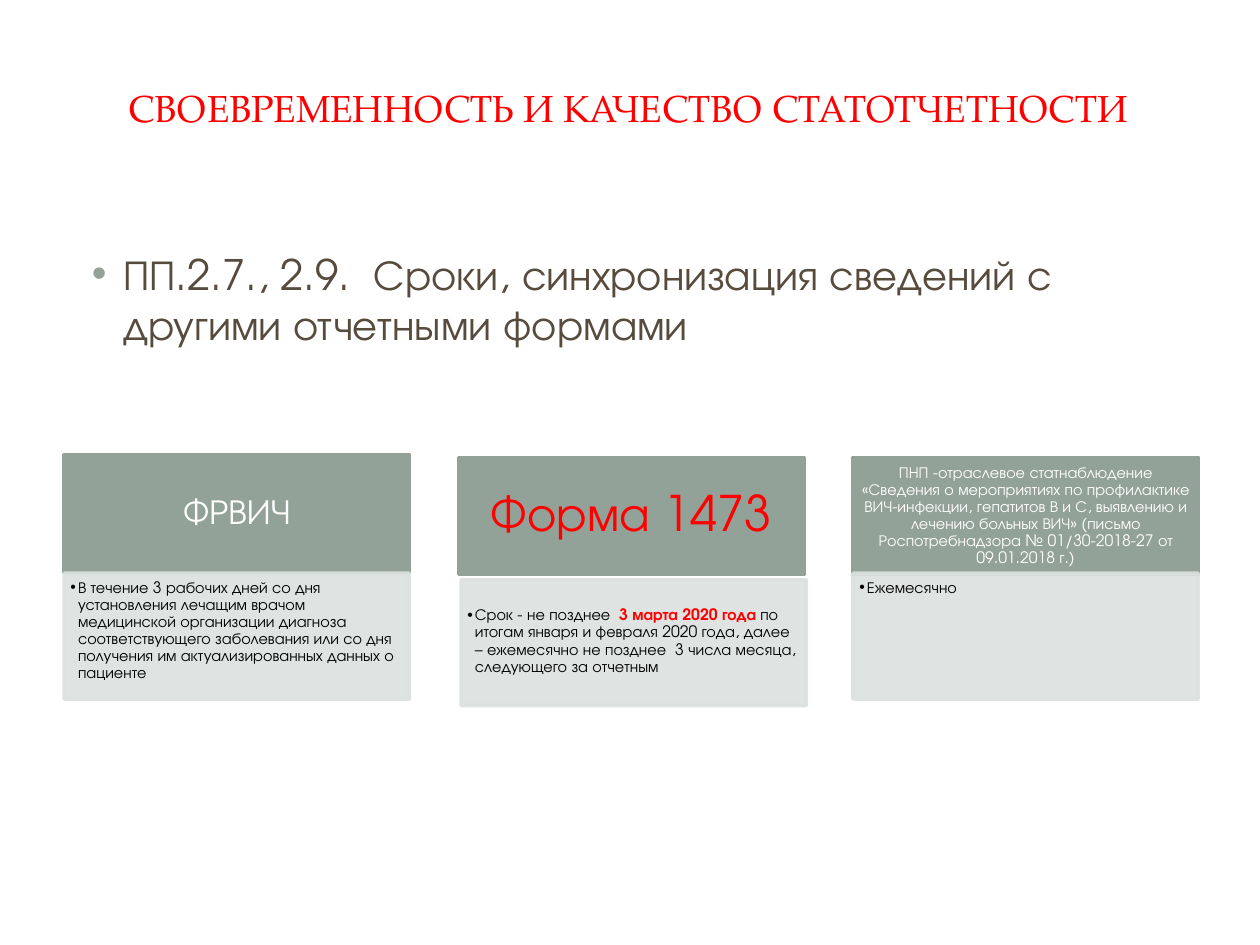
from lxml import etree
from pptx import Presentation, util as u
from pptx.dml.color import RGBColor
from pptx.enum import shapes, text
from pptx.oxml.ns import qn

COLORS = {
    "red": "FF0000",
    "brown": "564B3C",
    "sage": "93A299",
    "mist": "DCE0DE",
    "white": "FFFFFF",
    "black": "000000",
}
SANS, SERIF = "TeX Gyre Adventor", "TeX Gyre Pagella"
COLUMNS, ROWS = 100, 75


def rgb(name):
    return RGBColor.from_string(COLORS[name])


def add_run(p, content, font=SANS, size=9, color="black", bold=False):
    r = p.add_run()
    r.text = content
    r.font.name, r.font.size, r.font.bold = font, u.Pt(size), bold
    r.font.color.rgb = rgb(color)


def set_bullet(p, indent, color):
    pPr = p._p.get_or_add_pPr()
    pPr.set("marL", str(u.Inches(indent[0])))
    pPr.set("indent", str(u.Inches(indent[1])))
    buClr = etree.SubElement(pPr, qn("a:buClr"))
    etree.SubElement(buClr, qn("a:srgbClr"), val=COLORS[color])
    etree.SubElement(pPr, qn("a:buFont"), typeface="Arial")
    etree.SubElement(pPr, qn("a:buChar"), char="•")


def set_alpha(fill_parent, percent):
    for clr in fill_parent.iter(qn("a:srgbClr")):
        etree.SubElement(clr, qn("a:alpha"), val=str(percent * 1000))


class Deck:
    def __init__(self):
        self.prs = Presentation()
        self.prs.slide_width, self.prs.slide_height = u.Inches(10), u.Inches(7.5)
        self.s = self.prs.slides.add_slide(self.prs.slide_layouts[1])

    def cells(self, left, top, width, height):
        dx, dy = self.prs.slide_width / COLUMNS, self.prs.slide_height / ROWS
        return [round(v) for v in (left * dx, top * dy, width * dx, height * dy)]

    def frame(self, sp, anchor, insets):
        tf = sp.text_frame
        tf.word_wrap, tf.auto_size = True, text.MSO_AUTO_SIZE.NONE
        tf.vertical_anchor = anchor
        tf.margin_left, tf.margin_top, tf.margin_right, tf.margin_bottom = map(u.Inches, insets)
        return tf.paragraphs[0]

    def placeholder(self, sp, at, anchor, insets):
        sp.left, sp.top, sp.width, sp.height = self.cells(*at)
        return self.frame(sp, anchor, insets)

    def title(self, content, at):
        p = self.placeholder(self.s.shapes.title, at, text.MSO_ANCHOR.MIDDLE, (0.1, 0.05, 0.1, 0.39))
        p.alignment = text.PP_ALIGN.CENTER
        add_run(p, content, font=SERIF, size=21.6, color="red")

    def body(self, content, at):
        p = self.placeholder(self.s.placeholders[1], at, text.MSO_ANCHOR.TOP, (0.1, 0.05, 0.1, 0.05))
        p.space_before = u.Pt(4.8)
        set_bullet(p, (0.38, -0.25), "sage")
        add_run(p, content, size=24, color="brown")

    def box(self, at, color, anchor, insets):
        sp = self.s.shapes.add_shape(shapes.MSO_SHAPE.RECTANGLE, *self.cells(*at))
        sp.shadow.inherit = False
        sp.fill.solid()
        sp.fill.fore_color.rgb = sp.line.color.rgb = rgb(color)
        sp.line.width = u.Pt(2)
        p = self.frame(sp, anchor, insets)
        p.line_spacing = 0.9
        return sp, p

    def header(self, content, at, inset, **style):
        _, p = self.box(at, "sage", text.MSO_ANCHOR.MIDDLE, inset * 2)
        p.alignment = text.PP_ALIGN.CENTER
        add_run(p, content, **style)

    def detail(self, runs, at, top_inset):
        sp, p = self.box(at, "mist", text.MSO_ANCHOR.TOP, (0.05, top_inset, 0.07, 0.08))
        set_alpha(sp._element.spPr, 90)
        p.alignment = text.PP_ALIGN.LEFT
        set_bullet(p, (0.06, -0.06), "black")
        for content, style in runs:
            add_run(p, content, **style)


CARDS = [
    dict(
        header="ФРВИЧ", style=dict(size=20, color="white"), inset=(0.16, 0.09),
        header_top=36.1, detail_top=45.5, shift=0, top_inset=0.05,
        runs=[("В течение 3 рабочих дней со дня установления лечащим врачом медицинской "
               "организации диагноза соответствующего заболевания или со дня получения им "
               "актуализированных данных о пациенте", {})],
    ),
    dict(
        header="Форма 1473", style=dict(size=28, color="red"), inset=(0.22, 0.12),
        header_top=36.3, detail_top=46, shift=0.2, top_inset=0.22,
        runs=[("Срок - не позднее  ", {}),
              ("3 марта 2020 года ", dict(color="red", bold=True)),
              ("по итогам января и февраля 2020 года, далее – ежемесячно не позднее  "
               "3 числа месяца, следующего за отчетным", {})],
    ),
    dict(
        header="ПНП -отраслевое статнаблюдение «Сведения о мероприятиях по профилактике "
               "ВИЧ-инфекции, гепатитов В и С, выявлению и лечению больных ВИЧ» (письмо "
               "Роспотребнадзора № 01/30-2018-27 от 09.01.2018 г.)",
        style=dict(size=9, color="white"), inset=(0.07, 0.04),
        header_top=36.3, detail_top=45.5, shift=0, top_inset=0.05,
        runs=[("Ежемесячно", {})],
    ),
]
CARD_LEFT, CARD_PITCH, CARD_WIDTH = 5.1, 31.3, 27.4
HEADER_HEIGHT, DETAIL_HEIGHT = 9.3, 10


def main():
    deck = Deck()
    deck.title("СВОЕВРЕМЕННОСТЬ И КАЧЕСТВО СТАТОТЧЕТНОСТИ", (4.7, 4.5, 90.3, 11.4))
    deck.body("ПП.2.7., 2.9.  Сроки, синхронизация сведений с другими отчетными формами",
              (5, 19.2, 90, 47.8))
    for i, card in enumerate(CARDS):
        left = CARD_LEFT + i * CARD_PITCH
        deck.header(card["header"], (left, card["header_top"], CARD_WIDTH, HEADER_HEIGHT),
                    card["inset"], **card["style"])
        deck.detail(card["runs"], (left + card["shift"], card["detail_top"], CARD_WIDTH, DETAIL_HEIGHT),
                    card["top_inset"])
    deck.prs.save("out.pptx")


if __name__ == "__main__":
    main()
